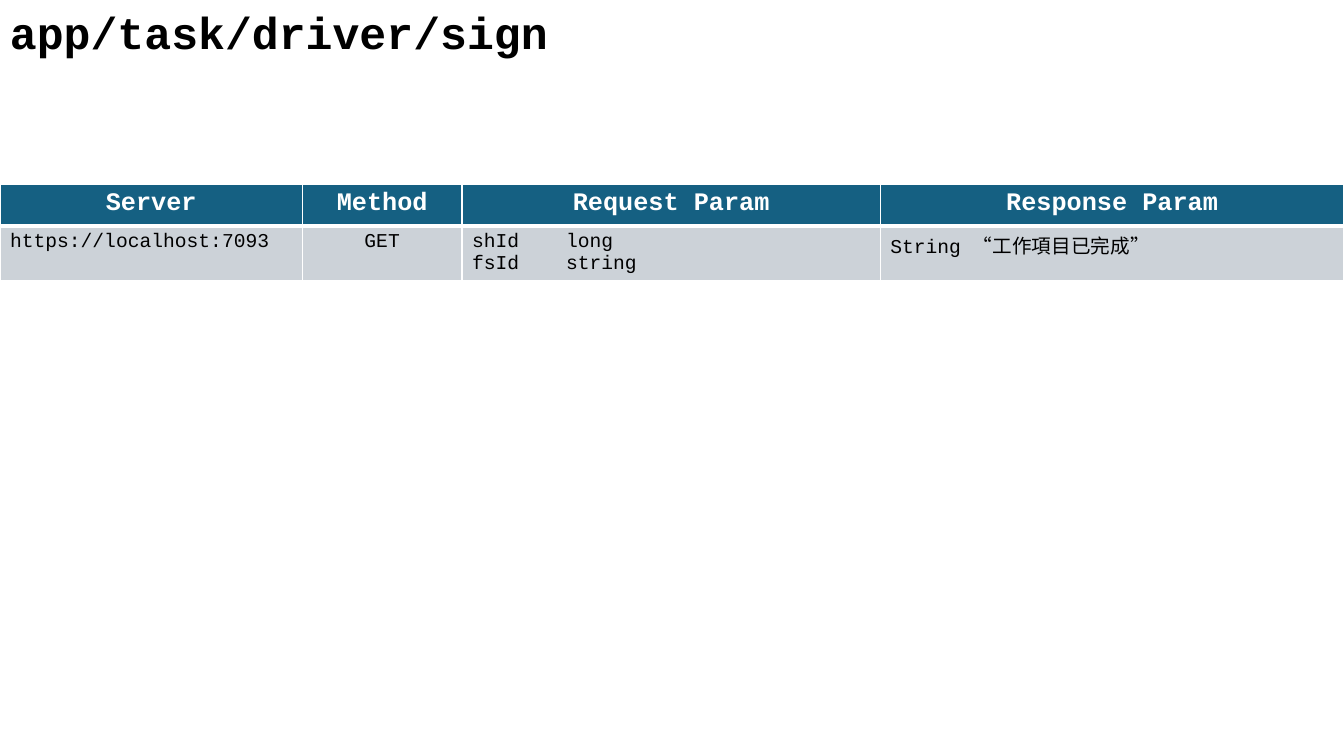
from lxml import etree
from pptx import Presentation
from pptx import util as u
from pptx.dml.color import RGBColor
from pptx.enum import text
from pptx.oxml import ns

WHITE = RGBColor(0xFF, 0xFF, 0xFF)
BLACK = RGBColor(0, 0, 0)
TEAL = RGBColor(0x15, 0x60, 0x82)
GRAY = RGBColor(0xCC, 0xD2, 0xD8)
LEFT, CENTER = text.PP_ALIGN.LEFT, text.PP_ALIGN.CENTER


class ApiPage:
    font = "Courier New"
    columns, rows = 160, 90
    tab_stop = 11.2

    def __init__(self, deck):
        self.page = deck.slides.add_slide(deck.slide_layouts[6])
        self.column = deck.slide_width / self.columns
        self.row = deck.slide_height / self.rows

    def across(self, count):
        return u.Emu(round(count * self.column))

    def down(self, count):
        return u.Emu(round(count * self.row))

    def fill_text(self, frame, content, size, color, bold=False, align=LEFT):
        frame.text = content
        for para in frame.paragraphs:
            para.alignment = align
            if "\t" in para.text:
                self.add_tab(para)
            para.font.name = self.font
            para.font.size = u.Pt(size)
            para.font.bold = bold
            para.font.color.rgb = color

    def add_tab(self, para):
        stops = etree.SubElement(para._p.get_or_add_pPr(), ns.qn("a:tabLst"))
        etree.SubElement(stops, ns.qn("a:tab"), pos=str(self.across(self.tab_stop)), algn="l")

    def title(self, content, width, height):
        box = self.page.shapes.add_textbox(0, 0, self.across(width), self.down(height))
        frame = box.text_frame
        frame.word_wrap = True
        frame.auto_size = text.MSO_AUTO_SIZE.SHAPE_TO_FIT_TEXT
        self.fill_text(frame, content, 32, BLACK, bold=True)

    def border(self, cell, top, bottom):
        props = cell._tc.get_or_add_tcPr()
        for side, points in zip("LRTB", (1, 1, top, bottom)):
            line = etree.SubElement(props, ns.qn(f"a:ln{side}"), w=str(u.Pt(points)))
            fill = etree.SubElement(line, ns.qn("a:solidFill"))
            etree.SubElement(fill, ns.qn("a:srgbClr"), val=str(WHITE))

    def cell(self, cell, content, fill, size, color, bold, align, top, bottom):
        self.border(cell, top, bottom)
        cell.fill.solid()
        cell.fill.fore_color.rgb = fill
        self.fill_text(cell.text_frame, content, size, color, bold, align)

    def table(self, top, widths, height, headings, values, aligns):
        table = self.page.shapes.add_table(
            2, len(widths), 0, self.down(top), self.across(sum(widths)), self.down(2 * height)
        ).table
        for row in table.rows:
            row.height = self.down(height)
        for index, width in enumerate(widths):
            table.columns[index].width = self.across(width)
            self.cell(table.cell(0, index), headings[index], TEAL, 18, WHITE, True, CENTER, 1, 3)
            self.cell(table.cell(1, index), values[index], GRAY, 14, BLACK, False, aligns[index], 3, 1)


def main():
    deck = Presentation()
    deck.slide_width, deck.slide_height = u.Inches(13.33), u.Inches(7.5)
    page = ApiPage(deck)
    page.table(
        top=22,
        widths=(36, 19, 49.8, 55.2),
        height=4.9,
        headings=("Server", "Method", "Request Param", "Response Param"),
        values=(
            "https://localhost:7093",
            "GET",
            "shId\tlong\nfsId\tstring",
            "String “工作項目已完成”",
        ),
        aligns=(LEFT, CENTER, LEFT, LEFT),
    )
    page.title("app/task/driver/sign", width=76.7, height=7.7)
    deck.save("out.pptx")


if __name__ == "__main__":
    main()
